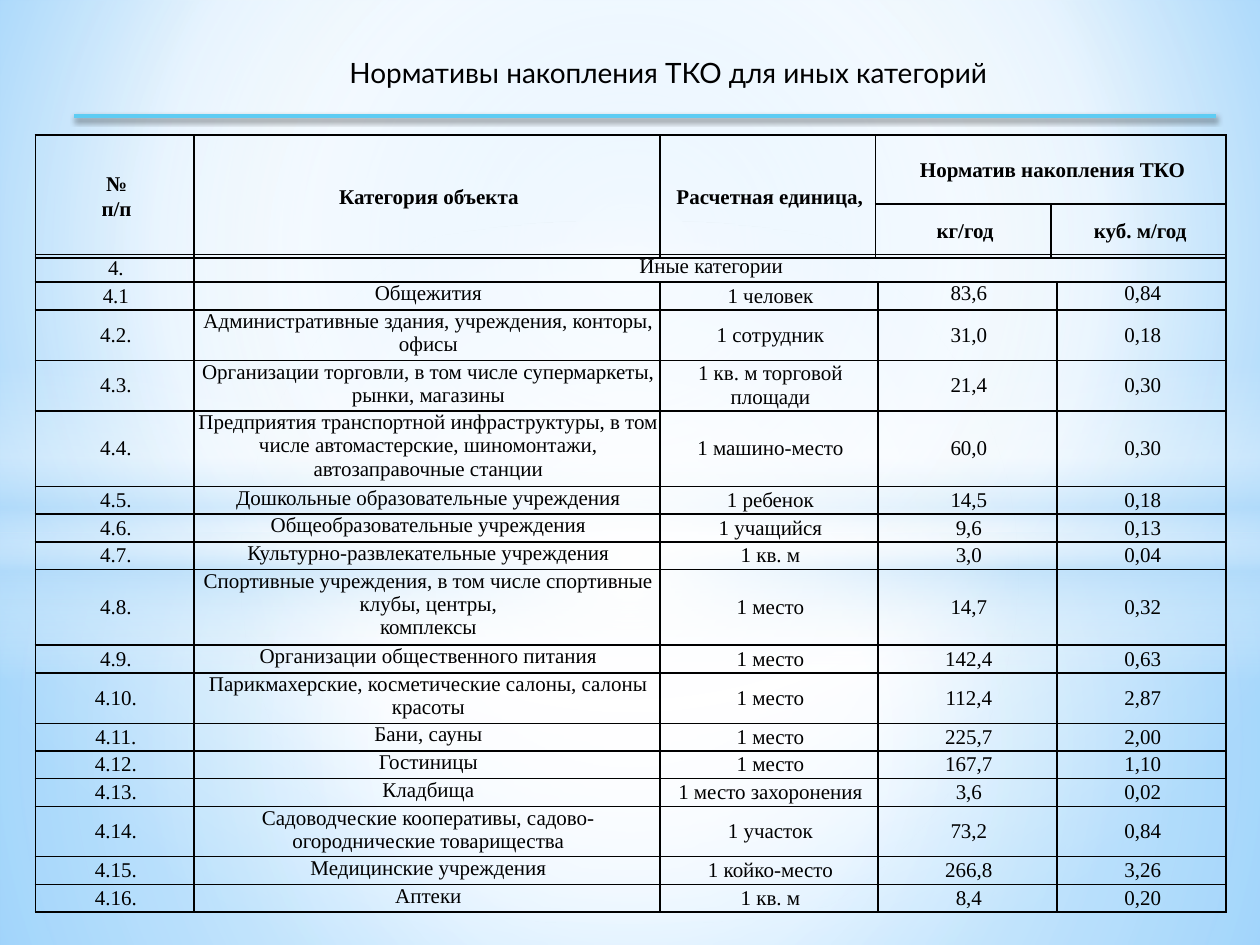
"""Builds a slide with a two-level table header and waste accumulation norms by category."""
from dataclasses import dataclass

from pptx import Presentation
from pptx.dml.color import RGBColor
from pptx.enum.shapes import MSO_CONNECTOR, MSO_SHAPE
from pptx.enum.text import MSO_ANCHOR as Anchor, MSO_AUTO_SIZE as AutoSize, PP_ALIGN as Align
from pptx.oxml import parse_xml
from pptx.oxml.ns import nsdecls, qn
from pptx.util import Inches, Pt

BLACK = "000000"
TABLE_FONT = "Times New Roman"
ROW_HEIGHTS = {1: 0.22, 2: 0.4, 3: 0.59}
CENTRE = (50, 50, 50, 50)


@dataclass(frozen=True)
class Gradient:
    stops: tuple
    focus: tuple | None = None


@dataclass(frozen=True)
class Glow:
    preset: MSO_SHAPE
    box: tuple
    gradient: Gradient


@dataclass(frozen=True)
class Norm:
    number: str
    category: str
    unit: str
    kilograms: str
    cubic_metres: str
    lines: int = 1


BACKDROP = Gradient(((0, "9ED5FF", 100), (60, "FFFFFF", 100), (100, "5BB9FF", 100)), (20, 10, 20, 60))
GLOWS = [
    Glow(MSO_SHAPE.RECTANGLE, (0, 4.23, 10, 3.27),
         Gradient(((0, "FFFFFF", 91), (37, "FFFFFF", 76), (100, "B4DCFA", 79)), CENTRE)),
    Glow(MSO_SHAPE.RECTANGLE, (0, 0, 10, 4.23),
         Gradient(((0, "FFFFFF", 89), (48, "FFFFFF", 62), (100, "B4DCFA", 79)), CENTRE)),
    Glow(MSO_SHAPE.RECTANGLE, (0, 2.9, 10, 2.5),
         Gradient(((0, "FFFFFF", 0), (29, "FFFFFF", 30), (45, "B4DCFA", 40),
                   (55, "FFFFFF", 26), (65, "B4DCFA", 60), (100, "FFFFFF", 0)))),
    Glow(MSO_SHAPE.OVAL, (0, 1.75, 10, 5.58),
         Gradient(((0, "FFFFFF", 100), (54, "FFFFFF", 0)), CENTRE)),
]
NORMS = [
    Norm("4.1", "Общежития", "1 человек", "83,6", "0,84"),
    Norm("4.2.", "Административные здания, учреждения, конторы, офисы", "1 сотрудник", "31,0", "0,18", 2),
    Norm("4.3.", "Организации торговли, в том числе супермаркеты, рынки, магазины",
         "1 кв. м торговой площади", "21,4", "0,30", 2),
    Norm("4.4.", "Предприятия транспортной инфраструктуры, в том числе автомастерские, "
         "шиномонтажи, автозаправочные станции", "1 машино-место", "60,0", "0,30", 3),
    Norm("4.5.", "Дошкольные образовательные учреждения", "1 ребенок", "14,5", "0,18"),
    Norm("4.6.", "Общеобразовательные учреждения", "1 учащийся", "9,6", "0,13"),
    Norm("4.7.", "Культурно-развлекательные учреждения", "1 кв. м", "3,0", "0,04"),
    Norm("4.8.", "Спортивные учреждения, в том числе спортивные клубы, центры,\nкомплексы",
         "1 место", "14,7", "0,32", 3),
    Norm("4.9.", "Организации общественного питания", "1 место", "142,4", "0,63"),
    Norm("4.10.", "Парикмахерские, косметические салоны, салоны красоты", "1 место", "112,4", "2,87", 2),
    Norm("4.11.", "Бани, сауны", "1 место", "225,7", "2,00"),
    Norm("4.12.", "Гостиницы", "1 место", "167,7", "1,10"),
    Norm("4.13.", "Кладбища", "1 место захоронения", "3,6", "0,02"),
    Norm("4.14.", "Садоводческие кооперативы, садово-огороднические товарищества",
         "1 участок", "73,2", "0,84", 2),
    Norm("4.15.", "Медицинские учреждения", "1 койко-место", "266,8", "3,26"),
    Norm("4.16.", "Аптеки", "1 кв. м", "8,4", "0,20"),
]


def colour(value: str) -> RGBColor:
    return RGBColor.from_string(value)


def paint_gradient(fill, owner, gradient: Gradient) -> None:
    fill.solid()
    plain = owner.find(".//" + qn("a:solidFill"))
    stops = "".join(
        f'<a:gs pos="{position * 1000}"><a:srgbClr val="{tint}">'
        f'<a:alpha val="{opacity * 1000}"/></a:srgbClr></a:gs>'
        for position, tint, opacity in gradient.stops)
    direction = '<a:lin ang="5400000" scaled="0"/>'
    if gradient.focus:
        left, top, right, bottom = (side * 1000 for side in gradient.focus)
        direction = (f'<a:path path="circle"><a:fillToRect l="{left}" t="{top}" '
                     f'r="{right}" b="{bottom}"/></a:path>')
    plain.getparent().replace(plain, parse_xml(
        f'<a:gradFill {nsdecls("a")} rotWithShape="1"><a:gsLst>{stops}</a:gsLst>{direction}</a:gradFill>'))


def draw_glow(slide, glow: Glow) -> None:
    shape = slide.shapes.add_shape(glow.preset, *map(Inches, glow.box))
    shape.shadow.inherit = False
    shape.line.fill.background()
    paint_gradient(shape.fill, shape._element, glow.gradient)


def draw_title(slide, wording: str) -> None:
    title = slide.shapes.title
    title.left, title.top, title.width, title.height = map(Inches, (1.09, 0.39, 8.43, 0.37))
    title.text_frame.text = wording
    title.text_frame.auto_size = AutoSize.SHAPE_TO_FIT_TEXT
    heading = title.text_frame.paragraphs[0]
    heading.alignment = Align.CENTER
    heading.font.name, heading.font.size = "Lato", Pt(16)
    heading.font.color.rgb = colour(BLACK)
    slide.shapes._spTree.append(title._element)


def draw_rule(slide) -> None:
    rule = slide.shapes.add_connector(
        MSO_CONNECTOR.STRAIGHT, Inches(0.59), Inches(0.92), Inches(9.65), Inches(0.92))
    rule.line.color.rgb = colour("5ECCF3")
    rule.line.width = Pt(2)
    rule._element.spPr.append(parse_xml(
        f'<a:effectLst {nsdecls("a")}><a:outerShdw blurRad="{Pt(3.1)}" dist="{Pt(1.8)}" dir="5400000">'
        f'<a:srgbClr val="{BLACK}"><a:alpha val="45000"/></a:srgbClr></a:outerShdw></a:effectLst>'))


def add_grid(slide, top: float, widths: list[float], heights: list[float]):
    table = slide.shapes.add_table(
        len(heights), len(widths), Inches(0.28), Inches(top),
        Inches(sum(widths)), Inches(sum(heights))).table
    table.first_row = table.horz_banding = False
    for column, width in zip(table.columns, widths):
        column.width = Inches(width)
    for row, height in zip(table.rows, heights):
        row.height = Inches(height)
    for cell in table.iter_cells():
        properties = cell._tc.get_or_add_tcPr()
        for side in "LRTB":
            properties.append(parse_xml(
                f'<a:ln{side} {nsdecls("a")} w="{Pt(1)}"><a:solidFill>'
                f'<a:srgbClr val="{BLACK}"/></a:solidFill></a:ln{side}>'))
        cell.fill.background()
        cell.margin_top = cell.margin_bottom = 0
        cell.margin_right = Inches(0.01)
    return table


def write_cell(cell, wording: str, inset: float, anchor=Anchor.MIDDLE,
               bold: bool = False, spacing: float = 1.0) -> None:
    cell.margin_left = Inches(inset)
    cell.vertical_anchor = anchor
    cell.text_frame.text = wording
    for paragraph in cell.text_frame.paragraphs:
        paragraph.alignment = Align.CENTER
        paragraph.line_spacing = spacing
        paragraph.font.name, paragraph.font.size = TABLE_FONT, Pt(12)
        paragraph.font.bold = bold
        paragraph.font.color.rgb = colour(BLACK)


def draw_header(slide) -> None:
    header = add_grid(slide, 1.07, [1.26, 3.7, 1.71, 1.39, 1.39], [0.55, 0.36])
    for column in range(3):
        header.cell(0, column).merge(header.cell(1, column))
    header.cell(0, 3).merge(header.cell(0, 4))
    captions = {
        (0, 0): "№\nп/п", (0, 1): "Категория объекта", (0, 2): "Расчетная единица,",
        (0, 3): "Норматив накопления ТКО", (1, 3): "кг/год", (1, 4): "куб. м/год",
    }
    for place, caption in captions.items():
        write_cell(header.cell(*place), caption, 0.04, bold=True, spacing=1.07)


def draw_norms(slide) -> None:
    heights = [ROW_HEIGHTS[1]] + [ROW_HEIGHTS[norm.lines] for norm in NORMS]
    norms = add_grid(slide, 2.02, [1.26, 3.7, 1.73, 1.42, 1.34], heights)
    norms.cell(0, 1).merge(norms.cell(0, 4))
    write_cell(norms.cell(0, 0), "4.", 0.03)
    write_cell(norms.cell(0, 1), "Иные категории", 0.03, Anchor.TOP)
    for row, norm in enumerate(NORMS, start=1):
        entries = (norm.number, norm.category, norm.unit, norm.kilograms, norm.cubic_metres)
        top_columns = (1, 3, 4) if row == 1 else (1,)
        for column, entry in enumerate(entries):
            anchor = Anchor.TOP if column in top_columns else Anchor.MIDDLE
            write_cell(norms.cell(row, column), entry, 0.03, anchor)


def main() -> None:
    deck = Presentation()
    deck.slide_width, deck.slide_height = Inches(10), Inches(7.5)
    slide = deck.slides.add_slide(deck.slide_layouts[5])
    paint_gradient(slide.background.fill, slide._element, BACKDROP)
    for glow in GLOWS:
        draw_glow(slide, glow)
    draw_title(slide, "Нормативы накопления ТКО для иных категорий")
    draw_rule(slide)
    draw_header(slide)
    draw_norms(slide)
    deck.save("out.pptx")


if __name__ == "__main__":
    main()
